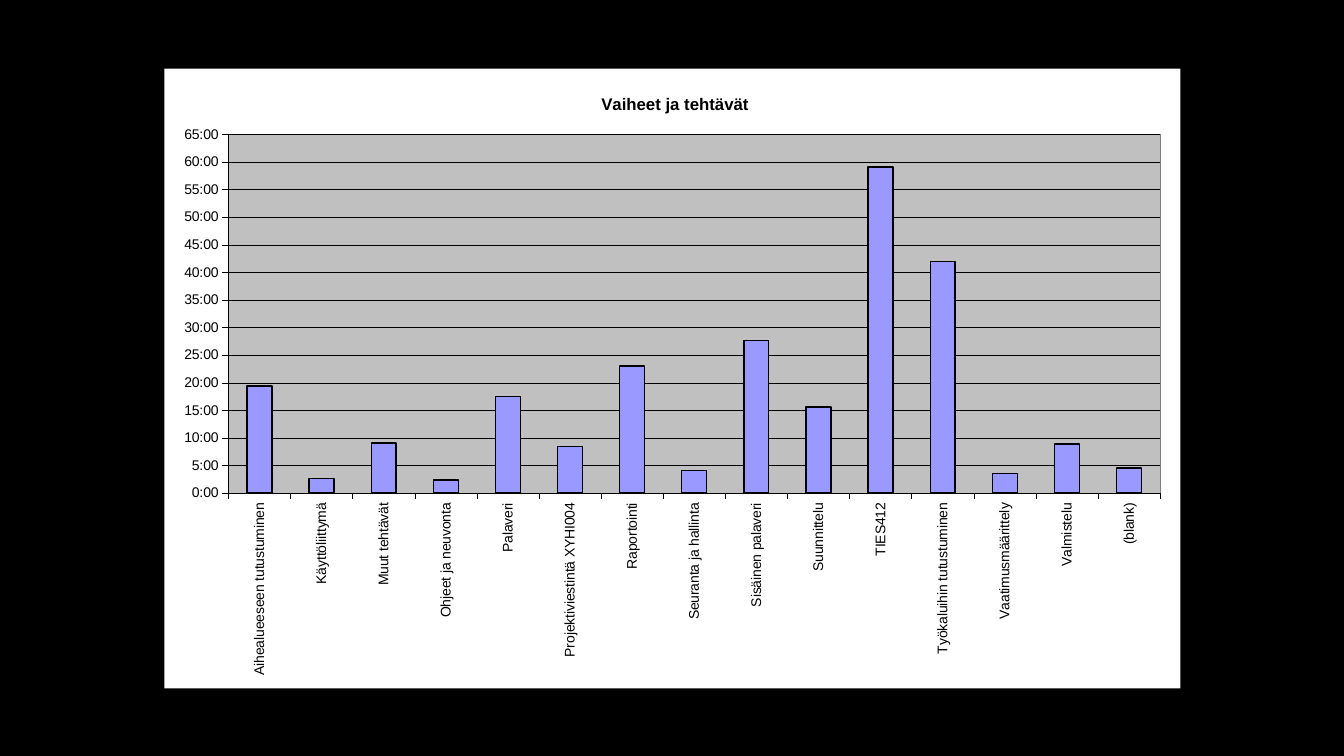
from lxml import etree
from pptx import Presentation
from pptx import chart as ch
from pptx.chart import data
from pptx.dml import color
from pptx.enum import chart as kinds
from pptx.oxml import ns, parse_xml
from pptx.util import Pt

HOUR = 1 / 24
TASKS = {
    "Aihealueeseen tutustuminen": 0.81,
    "Käyttöliittymä": 0.11,
    "Muut tehtävät": 0.38,
    "Ohjeet ja neuvonta": 0.1,
    "Palaveri": 0.73,
    "Projektiviestintä XYHI004": 0.35,
    "Raportointi": 0.96,
    "Seuranta ja hallinta": 0.17,
    "Sisäinen palaveri": 1.15,
    "Suunnittelu": 0.65,
    "TIES412": 2.46,
    "Työkaluihin tutustuminen": 1.75,
    "Vaatimusmäärittely": 0.15,
    "Valmistelu": 0.37,
    "(blank)": 0.19,
}


def rgb(code):
    return color.RGBColor.from_string(code)


def layout(inner="", **sides):
    """Return a manual layout, with sides as fractions of the chart."""
    target = '<c:layoutTarget val="inner"/>' if inner else ""
    modes = "".join(f'<c:{s}Mode val="edge"/>' for s in "xy")
    spots = "".join(f'<c:{s} val="{v}"/>' for s, v in sides.items())
    return parse_xml(f'<c:layout {ns.nsdecls("c")}><c:manualLayout>{target}'
                     f'{modes}{spots}</c:manualLayout></c:layout>')


def panel(fill, line=""):
    """Return the fill and border of a chart part."""
    paint = '<a:solidFill><a:srgbClr val="{}"/></a:solidFill>'
    edge = paint.format(line) if line else "<a:noFill/>"
    return parse_xml(f'<c:spPr {ns.nsdecls("c", "a")}>{paint.format(fill)}'
                     f'<a:ln w="3175">{edge}</a:ln></c:spPr>')


class Deck:
    face, ink, paper = "Arial", "000000", "FFFFFF"
    plot, bar, rim = "C0C0C0", "9999FF", "808080"

    def __init__(self, wide, high):
        self.prs = Presentation()
        self.prs.slide_width, self.prs.slide_height = Pt(wide), Pt(high)
        self.slide = self.prs.slides.add_slide(self.prs.slide_layouts[6])
        fill = self.slide.background.fill
        fill.solid()
        fill.fore_color.rgb = rgb(self.ink)

    def font(self, font, size, bold=False):
        font.name, font.size, font.bold = self.face, Pt(size), bold
        font.color.rgb = rgb(self.ink)

    def line(self, line, width):
        line.width = Pt(width)
        line.color.rgb = rgb(self.ink)

    def chart(self, x, y, w, h, values):
        source = data.CategoryChartData(number_format="[h]:mm")
        source.categories = list(values)
        source.add_series("Series 1", list(values.values()))
        frame = self.slide.shapes.add_chart(
            kinds.XL_CHART_TYPE.COLUMN_STACKED, Pt(x), Pt(y), Pt(w), Pt(h), source)
        chart = frame.chart
        chart.has_legend = False
        self.font(chart.font, 10)
        self.bars(chart.plots[0])
        for axis in (chart.category_axis, chart.value_axis):
            self.axis(axis)
        self.scale(chart.value_axis)
        root = chart.element
        root.find(".//c:catAx//a:bodyPr", ns._nsmap).set("rot", "-5400000")
        root.find("c:chart", ns._nsmap).addnext(panel(self.paper))
        area = root.find(".//c:plotArea", ns._nsmap)
        for old in area.findall("c:layout", ns._nsmap):
            area.remove(old)
        area.insert(0, layout("inner", x=0.063, y=0.106, w=0.917, h=0.579))
        area.append(panel(self.plot, self.rim))
        return chart

    def bars(self, plot):
        plot.gap_width, plot.overlap = 150, 100
        plot.vary_by_categories = False
        form = plot.series[0].format
        form.fill.solid()
        form.fill.fore_color.rgb = rgb(self.bar)
        self.line(form.line, 1)

    def axis(self, axis):
        axis.major_tick_mark = kinds.XL_TICK_MARK.OUTSIDE
        axis.minor_tick_mark = kinds.XL_TICK_MARK.NONE
        self.font(axis.tick_labels.font, 10)
        self.line(axis.format.line, 0.25)

    def scale(self, axis):
        axis.minimum_scale, axis.maximum_scale = 0, 65 * HOUR
        axis.major_unit = 5 * HOUR
        axis.has_major_gridlines = True
        self.line(axis.major_gridlines.format.line, 0.25)
        axis.tick_labels.number_format = "[h]:mm"
        axis.tick_labels.number_format_is_linked = False

    def title(self, chart, words):
        chart.has_title = True
        title = chart.chart_title
        title.include_in_layout = False
        title.text_frame.text = words
        self.font(title.text_frame.paragraphs[0].runs[0].font, 12, True)
        root = chart.element.find(".//c:title", ns._nsmap)
        for old in root.findall("c:layout", ns._nsmap):
            root.remove(old)
        root.find("c:tx", ns._nsmap).addnext(layout(x=0.427, y=0.035))


def main():
    deck = Deck(960, 540)
    chart = deck.chart(117.4, 49, 725.8, 442.8, TASKS)
    deck.title(chart, "Vaiheet ja tehtävät")
    deck.prs.save("out.pptx")


if __name__ == "__main__":
    main()
